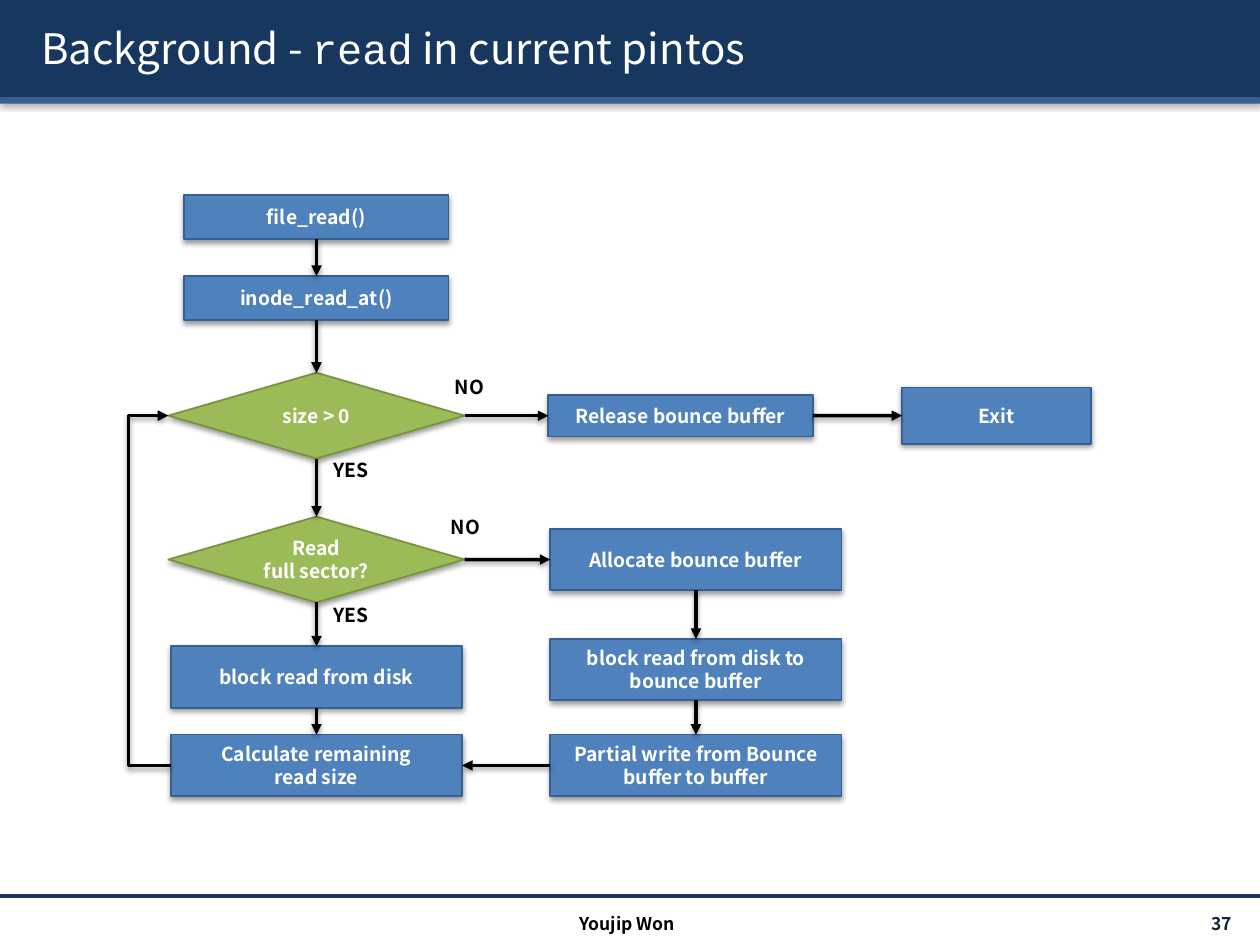
import lxml.etree
import pptx
import pptx.dml.color
import pptx.enum.shapes
import pptx.enum.text
import pptx.oxml.ns
import pptx.util

Cm = pptx.util.Cm
Pt = pptx.util.Pt
qn = pptx.oxml.ns.qn
SHAPE = pptx.enum.shapes.MSO_SHAPE
CONNECTOR = pptx.enum.shapes.MSO_CONNECTOR
ALIGN = pptx.enum.text.PP_ALIGN
ANCHOR = pptx.enum.text.MSO_ANCHOR
SANS = "Noto Sans CJK KR"
TOP, LEFT, BOTTOM, RIGHT = range(4)


def color(value):
    return pptx.dml.color.RGBColor.from_string(value)


def add_shadow(properties, blur=3.1, distance=1.6, direction=90, opacity=38):
    effects = lxml.etree.SubElement(properties, qn("a:effectLst"))
    shadow = lxml.etree.SubElement(
        effects, qn("a:outerShdw"), blurRad=str(Pt(blur)), dist=str(Pt(distance)),
        dir=str(direction * 60000), algn="tl", rotWithShape="0")
    black = lxml.etree.SubElement(shadow, qn("a:srgbClr"), val="000000")
    lxml.etree.SubElement(black, qn("a:alpha"), val=str(opacity * 1000))


presentation = pptx.Presentation()
presentation.slide_width = Cm(25.4)
presentation.slide_height = Cm(19.05)
slide = presentation.slides.add_slide(presentation.slide_layouts[6])
shapes = slide.shapes

for top, height, fill in [(0, 1.96, "17375E"), (1.96, 0.13, "376092")]:
    band = shapes.add_shape(SHAPE.RECTANGLE, 0, Cm(top), Cm(25.4), Cm(height))
    band.fill.solid()
    band.fill.fore_color.rgb = color(fill)
    band.line.fill.background()
    add_shadow(band._element.spPr)

footer_line = shapes.add_connector(CONNECTOR.STRAIGHT, 0, Cm(18.06), Cm(25.4), Cm(18.06))
footer_line.line.color.rgb = color("17375E")
footer_line.line.width = Pt(2)
lxml.etree.SubElement(footer_line._element.spPr, qn("a:effectLst"))

title = shapes.add_textbox(Cm(0.58), Cm(0.15), Cm(24.41), Cm(1.63))
title.text_frame.word_wrap = True
title.text_frame.vertical_anchor = ANCHOR.MIDDLE
paragraph = title.text_frame.paragraphs[0]
for text, font_name in [("Background - ", SANS), ("read", "Courier New"), (" in current pintos", SANS)]:
    run = paragraph.add_run()
    run.text = text
    run.font.size = Pt(24)
    run.font.color.rgb = color("FFFFFF")
    add_shadow(run.font._element, 0, 1.5, 45, 100)
    run.font.name = font_name

BOX = (SHAPE.RECTANGLE, "4F81BD", "376092")
DECISION = (SHAPE.DIAMOND, "9BBB59", "77933C")
LEFT_X, RIGHT_X = 6.38, 14.03
CALL, CHOICE, STEP = (5.33, 0.89), (5.97, 1.73), (5.87, 1.24)
nodes = {}
for name, style, x, y, (width, height), text in [
    ("file_read", BOX, LEFT_X, 4.38, CALL, "file_read()"),
    ("inode_read", BOX, LEFT_X, 6.01, CALL, "inode_read_at()"),
    ("size", DECISION, LEFT_X, 8.38, CHOICE, "size > 0"),
    ("sector", DECISION, LEFT_X, 11.28, CHOICE, "Read\nfull sector?"),
    ("block_read", BOX, LEFT_X, 13.65, STEP, "block read from disk"),
    ("remaining", BOX, LEFT_X, 15.43, STEP, "Calculate remaining\nread size"),
    ("release", BOX, 13.72, 8.38, (5.33, 0.84), "Release bounce buffer"),
    ("exit", BOX, 20.09, 8.38, (3.81, 1.14), "Exit"),
    ("allocate", BOX, RIGHT_X, 11.28, STEP, "Allocate bounce buffer"),
    ("bounce_read", BOX, RIGHT_X, 13.5, STEP, "block read from disk to bounce buffer"),
    ("partial_write", BOX, RIGHT_X, 15.43, STEP, "Partial write from Bounce buffer to buffer"),
]:
    preset, fill, outline = style
    node = shapes.add_shape(preset, Cm(x - width / 2), Cm(y - height / 2), Cm(width), Cm(height))
    node.fill.solid()
    node.fill.fore_color.rgb = color(fill)
    node.line.color.rgb = color(outline)
    node.line.width = Pt(1)
    add_shadow(node._element.spPr)
    node.text_frame.text = text
    node.text_frame.word_wrap = True
    node.text_frame.vertical_anchor = ANCHOR.MIDDLE
    for paragraph in node.text_frame.paragraphs:
        paragraph.alignment = ALIGN.CENTER
        paragraph.font.name = SANS
        paragraph.font.size = Pt(11)
        paragraph.font.bold = True
        paragraph.font.color.rgb = color("FFFFFF")
    nodes[name] = node

for source, source_site, target, target_site in [
    ("file_read", BOTTOM, "inode_read", TOP),
    ("inode_read", BOTTOM, "size", TOP),
    ("size", BOTTOM, "sector", TOP),
    ("sector", BOTTOM, "block_read", TOP),
    ("block_read", BOTTOM, "remaining", TOP),
    ("size", RIGHT, "release", LEFT),
    ("release", RIGHT, "exit", LEFT),
    ("sector", RIGHT, "allocate", LEFT),
    ("allocate", BOTTOM, "bounce_read", TOP),
    ("bounce_read", BOTTOM, "partial_write", TOP),
    ("partial_write", LEFT, "remaining", RIGHT),
    ("remaining", LEFT, "size", LEFT),
]:
    loops_back = source_site == target_site
    kind = CONNECTOR.ELBOW if loops_back else CONNECTOR.STRAIGHT
    arrow = shapes.add_connector(kind, 0, 0, 0, 0)
    arrow.begin_connect(nodes[source], source_site)
    arrow.end_connect(nodes[target], target_site)
    arrow.line.color.rgb = color("000000")
    arrow.line.width = Pt(2)
    properties = arrow._element.spPr
    lxml.etree.SubElement(properties.find(qn("a:ln")), qn("a:tailEnd"), type="triangle")
    add_shadow(properties)
    if loops_back:
        bend = round((arrow.begin_x - Cm(2.59)) / arrow.width * 100000)
        guides = properties.find(qn("a:prstGeom")).get_or_add_avLst()
        lxml.etree.SubElement(guides, qn("a:gd"), name="adj1", fmla=f"val {bend}")

for text, left, top, width, height, size, ink, alignment in [
    ("YES", 6.27, 9.12, 1.6, 0.89, 11, "000000", ALIGN.CENTER),
    ("YES", 6.27, 12.04, 1.6, 0.89, 11, "000000", ALIGN.CENTER),
    ("NO", 8.92, 7.44, 1.42, 0.89, 11, "000000", ALIGN.LEFT),
    ("NO", 8.84, 10.26, 1.42, 0.89, 11, "000000", ALIGN.LEFT),
    ("Youjip Won", 8.43, 18.29, 8.43, 0.61, 10, "000000", ALIGN.CENTER),
    ("37", 22.12, 18.31, 2.97, 0.61, 10, "0F243E", ALIGN.RIGHT),
]:
    label = shapes.add_textbox(Cm(left), Cm(top), Cm(width), Cm(height))
    label.text_frame.text = text
    label.text_frame.word_wrap = True
    if alignment == ALIGN.RIGHT:
        label.text_frame.vertical_anchor = ANCHOR.MIDDLE
    paragraph = label.text_frame.paragraphs[0]
    paragraph.alignment = alignment
    paragraph.font.name = SANS
    paragraph.font.size = Pt(size)
    paragraph.font.bold = True
    paragraph.font.color.rgb = color(ink)

presentation.save("out.pptx")
